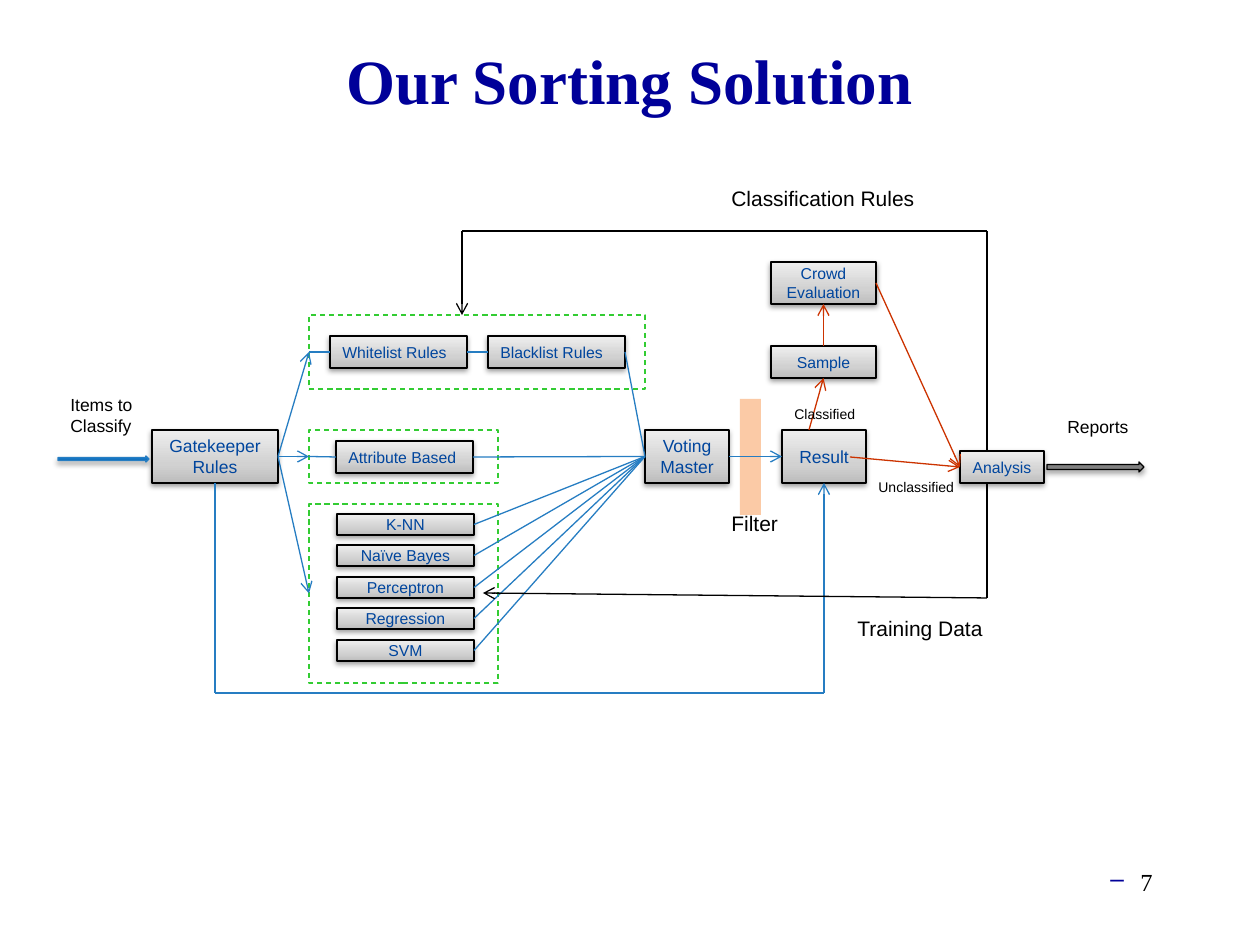
from copy import deepcopy
from lxml.etree import SubElement
from pptx import Presentation
from pptx.dml.color import RGBColor
from pptx.enum.dml import MSO_LINE
from pptx.enum.shapes import MSO_CONNECTOR, MSO_SHAPE
from pptx.enum.text import MSO_ANCHOR, PP_ALIGN
from pptx.oxml.ns import qn
from pptx.util import Inches, Pt

PX = Inches(1) / 126
NAVY = RGBColor(0x00, 0x00, 0x99)
INK = RGBColor(0x00, 0x45, 0x9D)
BLACK = RGBColor(0, 0, 0)
GRAY = RGBColor(0x80, 0x80, 0x80)
BLUE = RGBColor(0x26, 0x7D, 0xC2)
RED = RGBColor(0xCC, 0x33, 0x00)
GREEN = RGBColor(0x33, 0xCC, 0x33)
PEACH = RGBColor(0xFB, 0xCA, 0xA6)
SILVER = [(0, RGBColor(0xBD, 0xBD, 0xBD)), (0.35, RGBColor(0xD1, 0xD1, 0xD1)),
          (1, RGBColor(0xEE, 0xEE, 0xEE))]
AZURE = [(0, RGBColor(0x0F, 0x61, 0xA3)), (0.8, RGBColor(0x14, 0x7D, 0xD3)),
         (1, RGBColor(0x10, 0x7E, 0xD8))]
LEFT, MID, RIGHT = PP_ALIGN.LEFT, PP_ALIGN.CENTER, PP_ALIGN.RIGHT
TOP, WEST, BASE, EAST = range(4)

# name: text, place, size, alignment
MODELS = ["K-NN", "Naïve Bayes", "Perceptron", "Regression", "SVM"]
BOXES = {
    "gate": ("Gatekeeper\nRules", (152, 430, 126, 53), 10, MID),
    "white": ("Whitelist Rules", (330, 336, 137, 32), 9, LEFT),
    "black": ("Blacklist Rules", (488, 336, 137, 32), 9, LEFT),
    "attr": ("Attribute Based", (336, 441, 137, 32), 9, LEFT),
    "vote": ("Voting Master", (645, 430, 84, 53), 10, MID),
    "result": ("Result", (782, 430, 84, 53), 10, MID),
    "crowd": ("Crowd Evaluation", (771, 262, 105, 42), 9, MID),
    "sample": ("Sample", (771, 346, 105, 32), 9, MID),
    "check": ("Analysis", (960, 451, 84, 32), 9, MID),
}
for i, model in enumerate(MODELS):
    BOXES[model] = (model, (337, 514 + 63 * i // 2, 137, 21), 9, MID)

FRAMES = {
    "rules": (309, 315, 336, 74),
    "single": (309, 430, 189, 53),
    "learn": (309, 504, 189, 179),
}

# colour, start, end, arrowhead; an end is a box side or a point
LINES = [
    (BLUE, ("gate", BASE), (215, 693), False),
    (BLUE, (215, 693), (824, 693), False),
    (BLUE, (824, 693), ("result", BASE), True),
    (BLUE, ("gate", EAST), ("rules", WEST), True),
    (BLUE, ("gate", EAST), ("single", WEST), True),
    (BLUE, ("gate", EAST), ("learn", WEST), True),
    (BLUE, ("rules", WEST), ("white", WEST), False),
    (BLUE, ("white", EAST), ("black", WEST), False),
    (BLUE, ("single", WEST), ("attr", WEST), False),
    *[(BLUE, (name, EAST), ("vote", WEST), False)
      for name in ["black", "attr", *MODELS]],
    (BLUE, ("vote", EAST), ("result", WEST), True),
    (RED, (850, 457), ("check", WEST), True),
    (RED, (809, 430), ("sample", BASE), True),
    (RED, ("sample", TOP), ("crowd", BASE), True),
    (RED, ("crowd", EAST), ("check", WEST), True),
    (BLACK, (987, 483), (987, 598), False),
    (BLACK, (987, 598), (483, 593), True),
    (BLACK, (987, 451), (987, 231), False),
    (BLACK, (987, 231), (462, 231), False),
    (BLACK, (462, 231), (462, 315), True),
]

LABELS = [
    ("Items to Classify", (58, 388, 94, 55), 10),
    ("Filter", (719, 504, 73, 38), 12),
    ("Unclassified", (866, 472, 105, 30), 8),
    ("Classified", (782, 399, 105, 30), 8),
    ("Training Data", (845, 609, 158, 38), 12),
    ("Classification Rules", (719, 179, 242, 38), 12),
    ("Reports", (1055, 410, 116, 34), 10),
]


def emu(*spots):
    return [round(v * PX) for v in spots]


def write(frame, text, size, color, align=LEFT, font="Arial", bold=False):
    frame.word_wrap = True
    frame.text = text
    for para in frame.paragraphs:
        para.alignment = align
        for run in para.runs:
            run.font.size, run.font.name = Pt(size), font
            run.font.color.rgb, run.font.bold = color, bold


def label(text, place, size, color=BLACK, **look):
    frame = slide.shapes.add_textbox(*emu(*place)).text_frame
    write(frame, text, size, color, **look)
    return frame


def block(kind, place, fill=None, line=None):
    """Add a shape; fill is a colour, a list of gradient stops or None."""
    shape = slide.shapes.add_shape(kind, *emu(*place))
    shape.shadow.inherit = False
    if fill is None:
        shape.fill.background()
    elif isinstance(fill, list):
        shape.fill.gradient()
        shape.fill.gradient_angle = 90
        stops = shape._element.spPr.find(".//" + qn("a:gsLst"))
        stops.insert(1, deepcopy(stops[0]))
        for stop, (spot, color) in zip(shape.fill.gradient_stops, fill):
            stop.position, stop.color.rgb = spot, color
    else:
        shape.fill.solid()
        shape.fill.fore_color.rgb = fill
    if line is None:
        shape.line.fill.background()
    else:
        shape.line.color.rgb = line
        shape.line.width = Pt(0.75)
    return shape


def shade(shape, alpha, drop):
    """Cast a soft shadow downward; drop is its distance in points."""
    effects = shape._element.spPr.find(qn("a:effectLst"))
    cast = SubElement(effects, qn("a:outerShdw"), blurRad=str(Pt(3.1)),
                      dist=str(Pt(drop)), dir="5400000", rotWithShape="0")
    tone = SubElement(cast, qn("a:srgbClr"), val="000000")
    SubElement(tone, qn("a:alpha"), val=str(alpha * 1000))


def link(color, start, end, arrow):
    spots = [(0, 0) if isinstance(p[0], str) else p for p in (start, end)]
    line = slide.shapes.add_connector(
        MSO_CONNECTOR.STRAIGHT, *emu(*spots[0], *spots[1]))
    for point, join in ((start, line.begin_connect), (end, line.end_connect)):
        if isinstance(point[0], str):
            join(nodes[point[0]], point[1])
    line.line.color.rgb = color
    line.line.width = Pt(0.75)
    if arrow:
        SubElement(line.line._get_or_add_ln(), qn("a:tailEnd"), type="arrow")
    SubElement(line._element.spPr, qn("a:effectLst"))


deck = Presentation()
deck.slide_width, deck.slide_height = Inches(10), Inches(7.5)
slide = deck.slides.add_slide(deck.slide_layouts[6])

title = label("Our Sorting Solution", (94, 32, 1071, 94), 36, NAVY,
              align=MID, font="Times New Roman", bold=True)
title.vertical_anchor = MSO_ANCHOR.MIDDLE

number = label("7", (903, 861, 262, 63), 14, align=RIGHT, font="Times New Roman")
props = number.paragraphs[0]._p.get_or_add_pPr()
indent = emu(30)[0]
props.set("marL", str(indent))
props.set("indent", str(-indent))
tint = SubElement(props, qn("a:buClr"))
SubElement(tint, qn("a:srgbClr"), val=str(NAVY))
SubElement(props, qn("a:buChar"), char="–")

block(MSO_SHAPE.RECTANGLE, (740, 399, 21, 116), PEACH)
nodes = {}
for name, (text, place, size, align) in BOXES.items():
    nodes[name] = block(MSO_SHAPE.RECTANGLE, place, SILVER, BLACK)
    shade(nodes[name], 38, 1.6)
    write(nodes[name].text_frame, text, size, INK, align)
    nodes[name].text_frame.vertical_anchor = MSO_ANCHOR.MIDDLE
for name, place in FRAMES.items():
    nodes[name] = block(MSO_SHAPE.RECTANGLE, place, None, GREEN)
    nodes[name].line.dash_style = MSO_LINE.DASH
for place, fill, line in [((58, 456, 91, 6), AZURE, BLUE),
                          ((1047, 462, 97, 10), GRAY, BLACK)]:
    shade(block(MSO_SHAPE.RIGHT_ARROW, place, fill, line), 35, 1.8)
for line in LINES:
    link(*line)
for text, place, size in LABELS:
    label(text, place, size)

deck.save("out.pptx")
